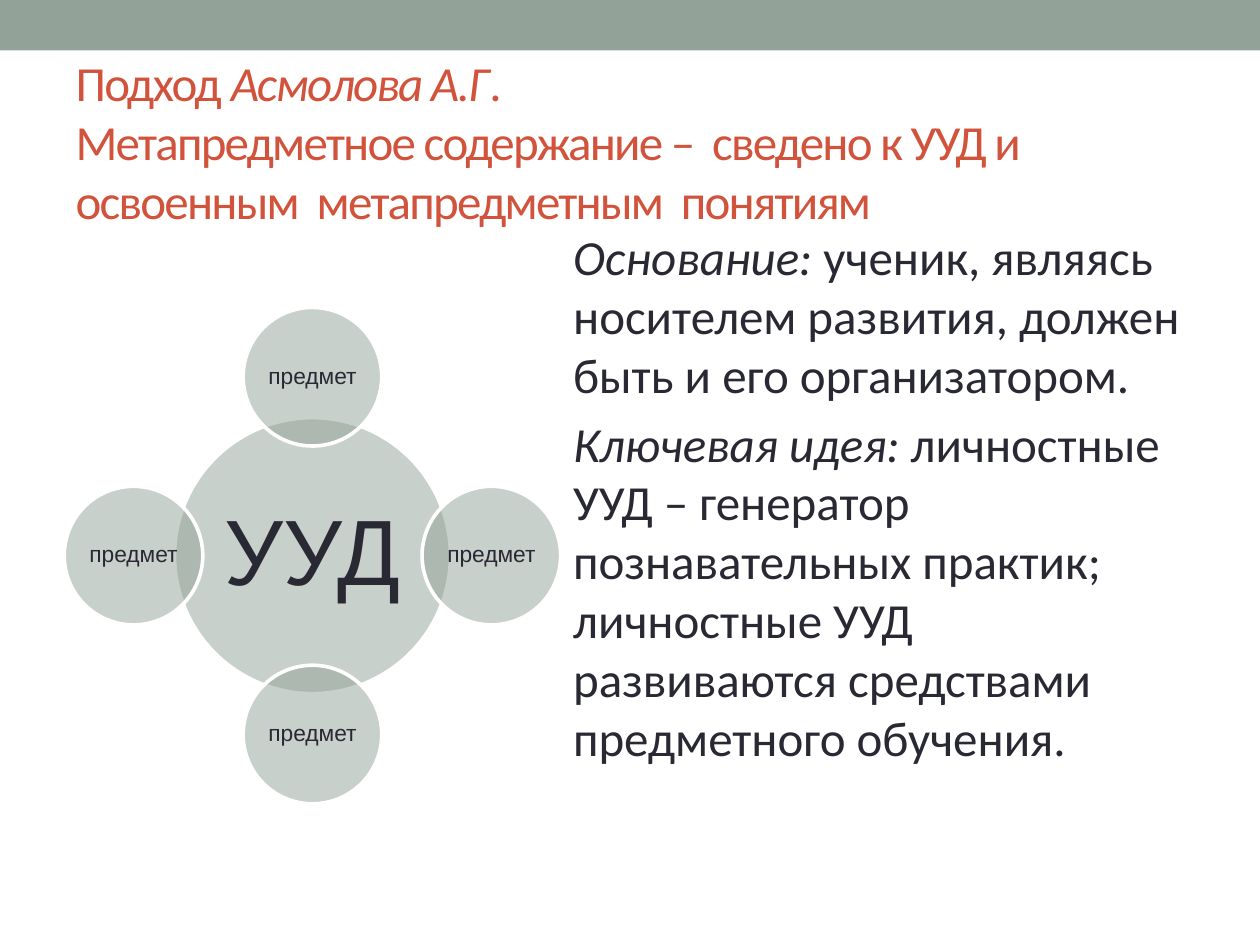
from copy import deepcopy

from lxml import etree
from pptx import Presentation
from pptx import util as u
from pptx.dml.color import RGBColor
from pptx.enum import shapes, text
from pptx.oxml.ns import qn

SAGE = RGBColor(0x93, 0xA2, 0x99)
RED = RGBColor(0xD2, 0x53, 0x3C)
INK = RGBColor(0x29, 0x29, 0x34)
WHITE = RGBColor(0xFF, 0xFF, 0xFF)


class SlideBuilder:
    """Holds the text style and the current slide."""

    title_font = {"name": "Calibri", "size": u.Pt(28), "color": RED}
    body_font = {"name": "Calibri", "size": u.Pt(28), "color": INK}
    label_font = {"name": "Arial", "color": INK}

    def __init__(self, prs):
        self.s = prs.slides.add_slide(prs.slide_layouts[5])

    def run(self, p, words, **style):
        r = p.add_run()
        r.text = words
        for name, value in style.items():
            if name == "color":
                r.font.color.rgb = value
            else:
                setattr(r.font, name, value)
        return r

    def place(self, sp, left, top, width, height):
        box = {"left": left, "top": top, "width": width, "height": height}
        for name, value in box.items():
            setattr(sp, name, u.Inches(value))

    def frame(self, tf, anchor, margin=None):
        style = {"word_wrap": True, "vertical_anchor": anchor, "auto_size": text.MSO_AUTO_SIZE.NONE}
        if margin is not None:
            for side in ("left", "top", "right", "bottom"):
                style[f"margin_{side}"] = u.Inches(margin)
        for name, value in style.items():
            setattr(tf, name, value)

    def shape(self, kind, left, top, width, height):
        sp = self.s.shapes.add_shape(kind, *map(u.Inches, (left, top, width, height)))
        sp.shadow.inherit = False
        sp.fill.solid()
        sp.fill.fore_color.rgb = SAGE
        return sp

    def band(self, height):
        sp = self.shape(shapes.MSO_SHAPE.RECTANGLE, 0, 0, 10, height)
        sp.line.fill.background()

    def title(self, lines, *box):
        sp = self.s.shapes.title
        self.place(sp, *box)
        self.frame(sp.text_frame, text.MSO_ANCHOR.MIDDLE)
        p = sp.text_frame.paragraphs[0]
        p.alignment = text.PP_ALIGN.LEFT
        for i, line in enumerate(lines):
            if i:
                p.add_line_break()
                br = p._p.findall(qn("a:br"))[-1]
                br.insert(0, deepcopy(r.font._element))
            for words, italic in line:
                r = self.run(p, words, italic=italic, **self.title_font)
                r.font._element.set("spc", "-100")

    def body(self, items, *box):
        tf = self.s.shapes.add_textbox(*map(u.Inches, box)).text_frame
        self.frame(tf, text.MSO_ANCHOR.TOP)
        for i, (lead, words) in enumerate(items):
            p = tf.add_paragraph() if i else tf.paragraphs[0]
            p.space_before = u.Pt(5.6)
            self.run(p, lead, italic=True, **self.body_font)
            self.run(p, words, italic=False, **self.body_font)

    def circle(self, words, x, y, size, points, margin):
        sp = self.shape(shapes.MSO_SHAPE.OVAL, x - size / 2, y - size / 2, size, size)
        color = sp.fill._xPr.find(qn("a:solidFill"))[0]
        etree.SubElement(color, qn("a:alpha"), val="50000")
        sp.line.color.rgb = WHITE
        sp.line.width = u.Pt(2.08)
        self.frame(sp.text_frame, text.MSO_ANCHOR.MIDDLE, margin)
        p = sp.text_frame.paragraphs[0]
        p.alignment = text.PP_ALIGN.CENTER
        p.line_spacing = 0.9
        self.run(p, words, size=u.Pt(points), **self.label_font)


def main():
    prs = Presentation()
    prs.slide_width, prs.slide_height = u.Inches(10), u.Inches(7.5)
    b = SlideBuilder(prs)
    b.band(0.4)
    b.title(
        [
            [("Подход ", False), ("Асмолова А.Г", True), (".", False)],
            [("Метапредметное содержание –  сведено к УУД и освоенным  метапредметным  понятиям", False)],
        ],
        0.5, 0.58, 9, 1.08,
    )
    b.body(
        [
            ("Основание: ", "ученик, являясь носителем развития, должен быть и его организатором."),
            (
                "Ключевая идея: ",
                "личностные УУД – генератор познавательных практик; "
                "личностные УУД развиваются средствами предметного обучения.",
            ),
        ],
        4.45, 1.75, 5.05, 4.95,
    )
    x, y, orbit = 2.48, 4.41, 1.42
    b.circle("УУД", x, y, 2.19, 53, 0.07)
    for dx, dy in ((0, -1), (1, 0), (0, 1), (-1, 0)):
        b.circle("предмет", x + dx * orbit, y + dy * orbit, 1.1, 13, 0.02)
    prs.save("out.pptx")


if __name__ == "__main__":
    main()
